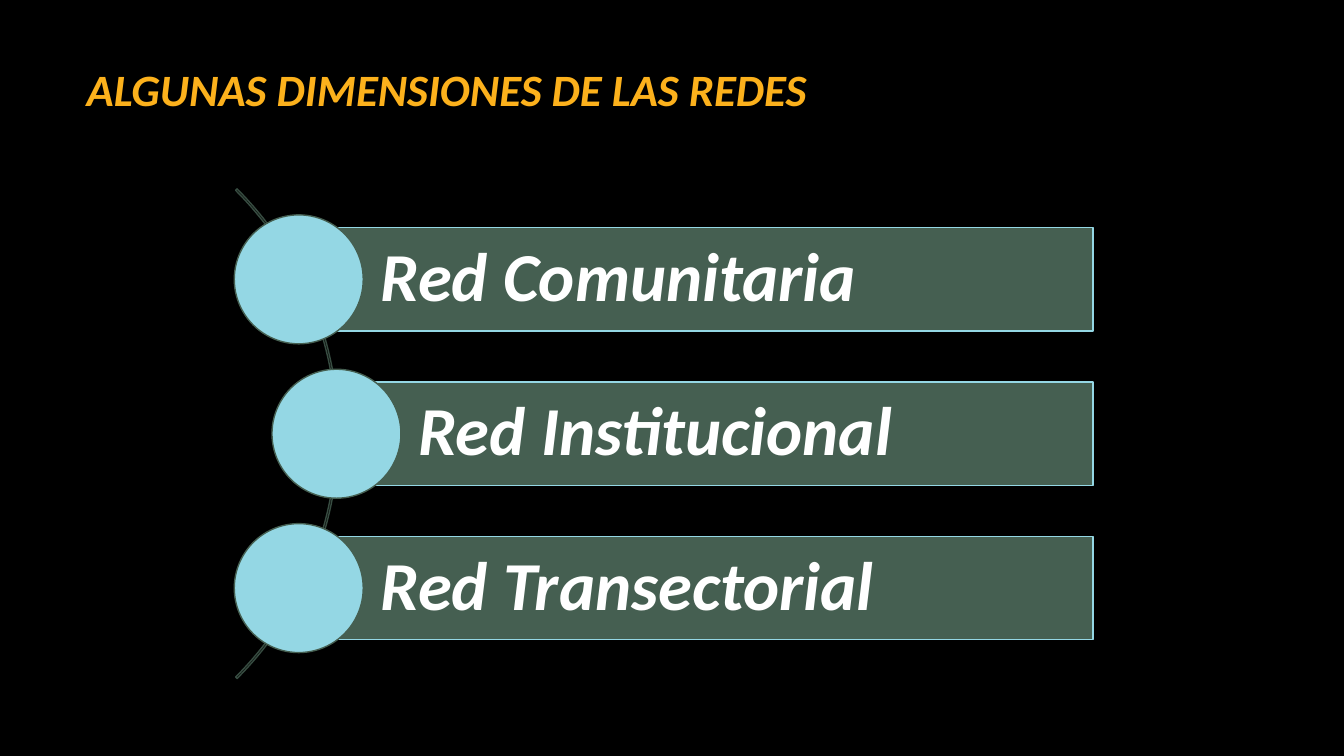
import pptx
import pptx.dml.color
import pptx.enum.shapes
import pptx.enum.text
import pptx.util

Cm = pptx.util.Cm
Pt = pptx.util.Pt
Kind = pptx.enum.shapes.MSO_SHAPE


class Theme:
    back = "000000"
    title = "FCB11C"
    text = "FFFFFF"
    bar = "455F51"
    dot = "94D7E4"
    arc = "374C41"
    font = "Calibri"
    head = Pt(32)
    label = Pt(49)
    line = Pt(1)


def color(code):
    return pptx.dml.color.RGBColor.from_string(code)


def apply(item, values):
    for name, value in values.items():
        setattr(item, name, value)


class Page:
    def __init__(self, deck, theme):
        self.theme = theme
        self.slide = deck.slides.add_slide(deck.slide_layouts[5])
        fill = self.slide.background.fill
        fill.solid()
        fill.fore_color.rgb = color(theme.back)

    def label(self, shape, text, size, ink, pads):
        frame = shape.text_frame
        frame.text = text
        apply(frame, {
            "word_wrap": True,
            "auto_size": pptx.enum.text.MSO_AUTO_SIZE.NONE,
            "vertical_anchor": pptx.enum.text.MSO_ANCHOR.MIDDLE,
            **pads,
        })
        para = frame.paragraphs[0]
        apply(para, {
            "alignment": pptx.enum.text.PP_ALIGN.LEFT,
            "line_spacing": 0.9,
        })
        font = para.runs[0].font
        apply(font, {"name": self.theme.font, "size": size,
                     "bold": True, "italic": True})
        font.color.rgb = color(ink)

    def title(self, text, left, top, width, height):
        shape = self.slide.shapes.title
        apply(shape, {"left": Cm(left), "top": Cm(top),
                      "width": Cm(width), "height": Cm(height)})
        self.label(shape, text, self.theme.head, self.theme.title, {})

    def shape(self, kind, left, top, width, height, fill, line):
        shape = self.slide.shapes.add_shape(
            kind, Cm(left), Cm(top), Cm(width), Cm(height))
        shape.shadow.inherit = False
        if fill:
            shape.fill.solid()
            shape.fill.fore_color.rgb = color(fill)
        else:
            shape.fill.background()
        shape.line.color.rgb = color(line)
        shape.line.width = self.theme.line
        return shape

    def arc(self, left, mid, size):
        """Thin arc from 315 to 45 degrees, centred on height mid."""
        shape = self.shape(Kind.BLOCK_ARC, left, mid - size / 2, size, size,
                           None, self.theme.arc)
        for index, value in enumerate((189, 27, 0.003)):
            shape.adjustments[index] = value

    def bar(self, text, left, mid, right, height):
        shape = self.shape(Kind.RECTANGLE, left, mid - height / 2,
                           right - left, height,
                           self.theme.bar, self.theme.dot)
        pad = Cm(0.36)
        self.label(shape, text, self.theme.label, self.theme.text, {
            "margin_left": Cm(2.06), "margin_right": pad,
            "margin_top": pad, "margin_bottom": pad,
        })

    def dot(self, x, y, size):
        self.shape(Kind.OVAL, x - size / 2, y - size / 2, size, size,
                   self.theme.dot, self.theme.bar)


def main():
    deck = pptx.Presentation()
    apply(deck, {"slide_width": Cm(33.87), "slide_height": Cm(19.05)})
    page = Page(deck, Theme())
    page.title("ALGUNAS DIMENSIONES DE LAS REDES", 1.93, 1.32, 25.4, 2.01)

    mid, pitch = 10.93, 3.89
    page.arc(-8.92, mid, 17.45)
    nets = (("Red Comunitaria", 7.53),
            ("Red Institucional", 8.48),
            ("Red Transectorial", 7.53))
    for row, (name, x) in enumerate(nets):
        y = mid + (row - 1) * pitch
        page.bar(name, x, y, 27.55, 2.6)
        page.dot(x, y, 3.25)

    deck.save("out.pptx")


if __name__ == "__main__":
    main()
